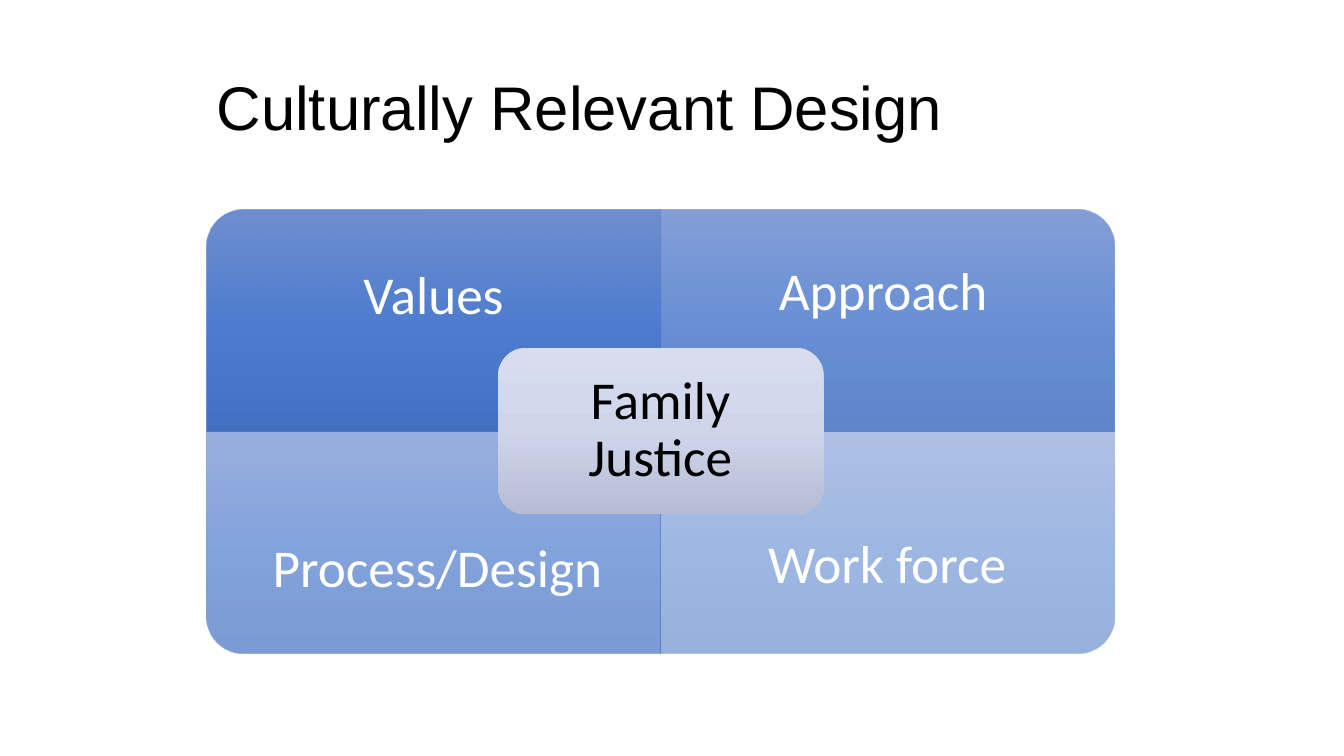
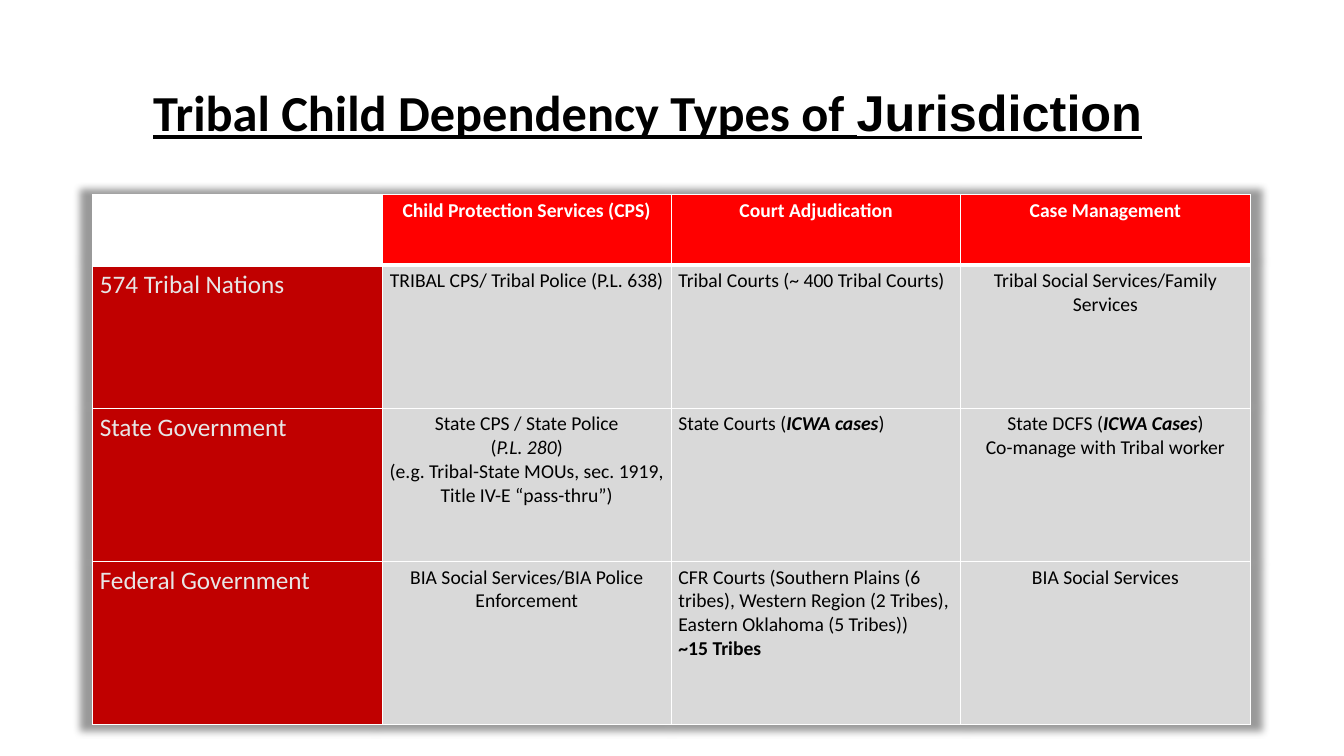
import dataclasses

import lxml.etree
import pptx
import pptx.dml.color
import pptx.enum.shapes
import pptx.enum.text
import pptx.oxml.ns
import pptx.util

Inches = pptx.util.Inches
Pt = pptx.util.Pt
qn = pptx.oxml.ns.qn
SHAPES = pptx.enum.shapes.MSO_SHAPE
CENTER = pptx.enum.text.PP_ALIGN.CENTER
LEFT = pptx.enum.text.PP_ALIGN.LEFT
MIDDLE = pptx.enum.text.MSO_ANCHOR.MIDDLE
TOP = pptx.enum.text.MSO_ANCHOR.TOP


@dataclasses.dataclass(frozen=True)
class Theme:
    body_font: str = "Calibri"
    title_font: str = "Arial"
    black: str = "000000"
    white: str = "FFFFFF"
    header_red: str = "FF0000"
    row_red: str = "C00000"
    row_label: str = "E7E6E6"
    cell_gray: str = "D9D9D9"
    quadrant_gradient: tuple = ("6183CB", "3E70CA", "3062BB")
    center_gradient: tuple = ("D8DDEE", "CED5EB", "B5BCD3")
    title_size: int = 44
    table_title_size: int = 36
    diagram_size: int = 38
    label_size: int = 18
    cell_size: int = 14


THEME = Theme()
BOLD = {"bold": True}
ITALIC = {"italic": True}
BOLD_ITALIC = BOLD | ITALIC

QUADRANTS = [  # label, opacity, rotation, column, row, text box
    ("Values", 90, 270, 0, 0, (2.05, 2.16, 4.5, 1.57)),
    ("Approach", 77, 0, 1, 0, (6.55, 2.08, 4.42, 1.65)),
    ("Process/Design", 63, 180, 0, 1, (2.13, 4.83, 4.42, 1.65)),
    ("Work force", 50, 90, 1, 1, (6.55, 4.83, 4.5, 1.57)),
]

HEADERS = ["", "Child Protection Services (CPS)", "Court Adjudication", "Case Management"]
JURISDICTIONS = [
    (
        "574 Tribal Nations",
        ["TRIBAL CPS/ Tribal Police (P.L. 638)"],
        ["Tribal Courts (~ 400 Tribal Courts)"],
        ["Tribal Social Services/Family Services"],
    ),
    (
        "State Government",
        [
            "State CPS / State Police",
            ["(", ("P.L. 280", ITALIC), ")"],
            "(e.g. Tribal-State MOUs, sec. 1919, Title IV-E “pass-thru”)",
        ],
        [["State Courts (", ("ICWA cases", BOLD_ITALIC), ")"]],
        [["State DCFS (", ("ICWA Cases", BOLD_ITALIC), ")"], "Co-manage with Tribal worker"],
    ),
    (
        "Federal Government",
        ["BIA Social Services/BIA Police Enforcement"],
        [
            "CFR Courts (Southern Plains (6 tribes), Western Region (2 Tribes), "
            "Eastern Oklahoma (5 Tribes))",
            [("~15 Tribes", BOLD)],
        ],
        ["BIA Social Services"],
    ),
]


def rgb(color):
    return pptx.dml.color.RGBColor.from_string(color)


def write_text(frame, paragraphs, align=LEFT, line_spacing=None, **run_format):
    """Write paragraphs; each is a string or a list of strings and (text, format) pairs."""
    for index, content in enumerate(paragraphs):
        paragraph = frame.paragraphs[0] if index == 0 else frame.add_paragraph()
        paragraph.alignment = align
        if line_spacing:
            paragraph.line_spacing = line_spacing
        for part in [content] if isinstance(content, str) else content:
            text, changes = (part, {}) if isinstance(part, str) else part
            add_run(paragraph, text, **(run_format | changes))


def add_run(paragraph, text, size, color=THEME.black, font=THEME.body_font,
            bold=False, italic=False, underline=False):
    run = paragraph.add_run()
    run.text = text
    run.font.name = font
    run.font.size = Pt(size)
    run.font.color.rgb = rgb(color)
    run.font.bold = bold
    run.font.italic = italic
    run.font.underline = underline


def add_text(slide, box, paragraphs, anchor=TOP, inset=None, **text_format):
    frame = slide.shapes.add_textbox(*map(Inches, box)).text_frame
    frame.word_wrap = True
    frame.vertical_anchor = anchor
    if inset is not None:
        frame.margin_left = frame.margin_right = Inches(inset)
        frame.margin_top = frame.margin_bottom = Inches(inset)
    write_text(frame, paragraphs, **text_format)


def add_diagram_label(slide, box, text, inset, color):
    add_text(slide, box, [text], anchor=MIDDLE, inset=inset, align=CENTER,
             line_spacing=0.9, size=THEME.diagram_size, color=color)


def add_gradient_shape(slide, kind, box, colors, opacity=100, rotation=0):
    """Add a shape shaded from top to bottom whatever its rotation."""
    shape = slide.shapes.add_shape(kind, *map(Inches, box))
    shape.rotation = rotation
    shape.shadow.inherit = False
    shape.line.fill.background()
    shape.fill.gradient()
    gradient = shape._element.spPr.find(qn("a:gradFill"))
    for child in list(gradient):
        gradient.remove(child)
    gradient.set("rotWithShape", "0")
    stops = lxml.etree.SubElement(gradient, qn("a:gsLst"))
    for position, color in zip((0, 50, 100), colors):
        stop = lxml.etree.SubElement(stops, qn("a:gs"), pos=str(position * 1000))
        add_color(stop, color, opacity)
    lxml.etree.SubElement(gradient, qn("a:lin"), ang="5400000", scaled="0")


def add_color(parent, color, opacity=100):
    element = lxml.etree.SubElement(parent, qn("a:srgbClr"), val=color)
    if opacity < 100:
        lxml.etree.SubElement(element, qn("a:alpha"), val=str(opacity * 1000))


def set_borders(cell, top, bottom):
    properties = cell._tc.get_or_add_tcPr()
    widths = {"a:lnL": 1, "a:lnR": 1, "a:lnT": top, "a:lnB": bottom}
    for index, (tag, width) in enumerate(widths.items()):
        line = lxml.etree.Element(qn(tag), w=str(Pt(width)))
        add_color(lxml.etree.SubElement(line, qn("a:solidFill")), THEME.white)
        properties.insert(index, line)


def add_table_shadow(table):
    effects = lxml.etree.Element(qn("a:effectLst"))
    shadow = lxml.etree.SubElement(
        effects, qn("a:outerShdw"), blurRad=str(Pt(5)), sx="102000", sy="102000",
        algn="ctr", rotWithShape="0")
    add_color(shadow, THEME.black, 40)
    table._tbl.tblPr.insert(0, effects)


def fill_cell(cell, paragraphs, fill, top=1, bottom=1, **text_format):
    cell.fill.solid()
    cell.fill.fore_color.rgb = rgb(fill)
    cell.margin_left = cell.margin_right = Inches(0.07)
    cell.margin_top = cell.margin_bottom = Inches(0.04)
    set_borders(cell, top, bottom)
    if any(paragraphs):
        write_text(cell.text_frame, paragraphs, **text_format)


def add_jurisdiction_table(slide):
    heights = [0.7, 1.42, 1.52, 1.62]
    table = slide.shapes.add_table(
        len(heights), len(HEADERS), Inches(0.92), Inches(1.93),
        Inches(11.48), Inches(sum(heights))).table
    table.first_row = table.horz_banding = False
    add_table_shadow(table)
    for column in table.columns:
        column.width = Inches(2.87)
    for row, height in zip(table.rows, heights):
        row.height = Inches(height)

    for column, header in enumerate(HEADERS):
        fill_cell(table.cell(0, column), [header],
                  THEME.header_red if header else THEME.white, bottom=3,
                  align=CENTER, size=THEME.cell_size, color=THEME.white, bold=True)
    for row, (government, *duties) in enumerate(JURISDICTIONS, start=1):
        top = 3 if row == 1 else 1
        fill_cell(table.cell(row, 0), [government], THEME.row_red, top=top,
                  size=THEME.label_size, color=THEME.row_label)
        for column, paragraphs in enumerate(duties, start=1):
            fill_cell(table.cell(row, column), paragraphs, THEME.cell_gray, top=top,
                      align=LEFT if column == 2 else CENTER, size=THEME.cell_size)


def add_quadrant(slide, label, opacity, rotation, column, row, text_box):
    width, height = 4.5, 2.2
    center_x = 2.05 + width * (column + 0.5)
    center_y = 2.08 + height * (row + 0.5)
    if rotation % 180:
        width, height = height, width
    box = (center_x - width / 2, center_y - height / 2, width, height)
    add_gradient_shape(slide, SHAPES.ROUND_1_RECTANGLE, box,
                       THEME.quadrant_gradient, opacity, rotation)
    add_diagram_label(slide, text_box, label, inset=0.3, color=THEME.white)


def build_design_slide(slide):
    add_text(slide, (2.05, 0.63, 9, 1.25), ["Culturally Relevant Design"],
             size=THEME.title_size, font=THEME.title_font)
    for quadrant in QUADRANTS:
        add_quadrant(slide, *quadrant)
    add_gradient_shape(slide, SHAPES.ROUNDED_RECTANGLE, (4.94, 3.45, 3.23, 1.65),
                       THEME.center_gradient)
    add_diagram_label(slide, (5.02, 3.53, 3.06, 1.49), "Family Justice",
                      inset=0.16, color=THEME.black)


def build_jurisdiction_slide(slide):
    title = ["Tribal Child Dependency Types of ", ("Jurisdiction", {"font": THEME.title_font})]
    add_text(slide, (1.42, 0.76, 11.91, 1.08), [title],
             size=THEME.table_title_size, bold=True, underline=True)
    add_jurisdiction_table(slide)


def main():
    presentation = pptx.Presentation()
    presentation.slide_width = Inches(13.33)
    presentation.slide_height = Inches(7.5)
    blank = presentation.slide_layouts[6]
    for build in (build_design_slide, build_jurisdiction_slide):
        build(presentation.slides.add_slide(blank))
    presentation.save("out.pptx")


if __name__ == "__main__":
    main()
